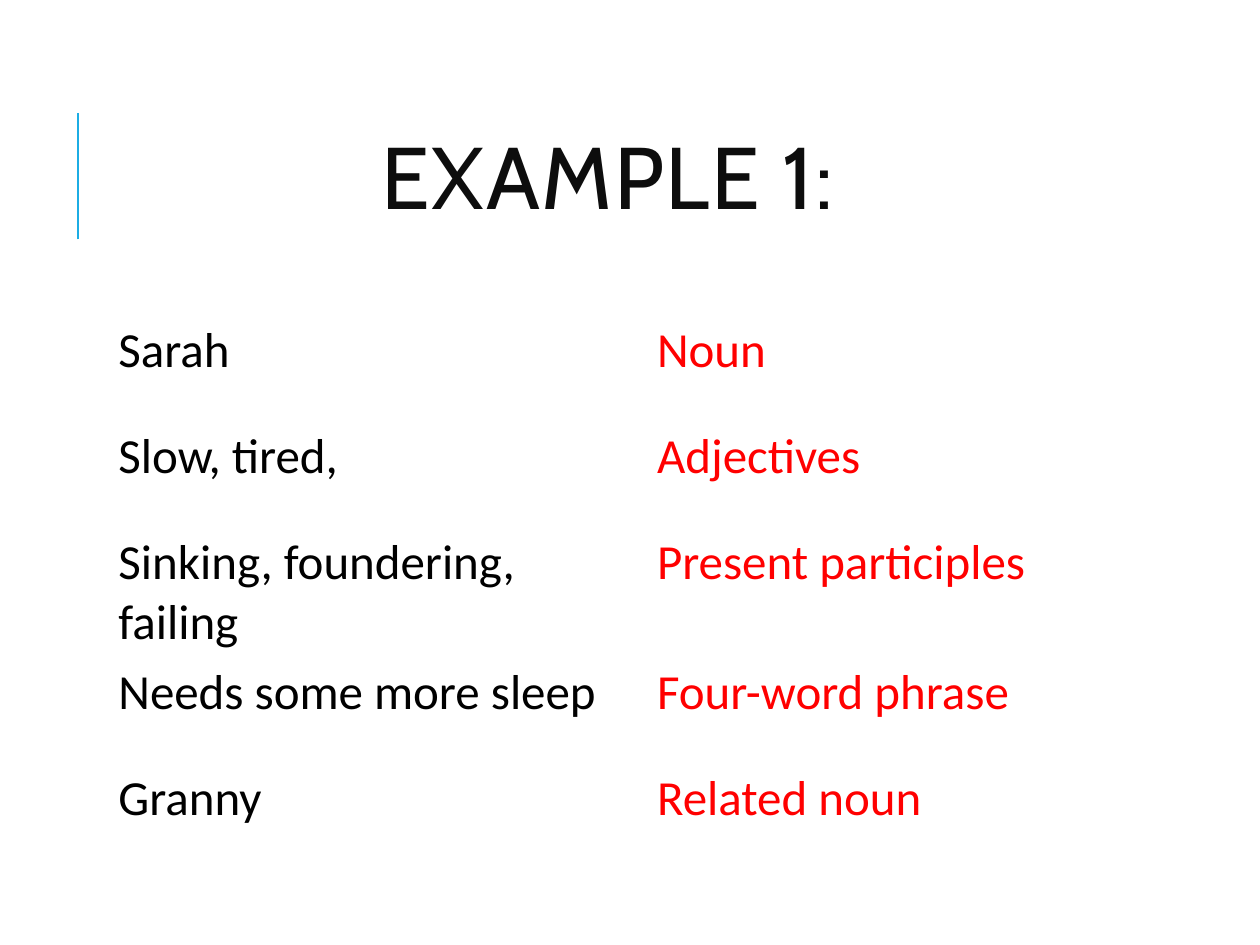
from lxml.etree import SubElement
from pptx import Presentation
from pptx.dml.color import RGBColor
from pptx.enum.shapes import MSO_CONNECTOR as CONN
from pptx.enum.text import MSO_ANCHOR as ANCHOR, PP_ALIGN as ALIGN
from pptx.oxml.ns import qn
from pptx.util import Inches, Pt

ROWS = [
    ("Sarah", "Noun"),
    ("Slow, tired,", "Adjectives"),
    ("Sinking, foundering, failing", "Present participles"),
    ("Needs some more sleep", "Four-word phrase"),
    ("Granny", "Related noun"),
]


def rgb(value):
    return RGBColor.from_string(value)


class SlideBuilder:
    """Holds the style and the current slide, and adds each kind of element."""

    accent = "1CADE4"
    title_font = {"name": "Cabin", "size": Pt(50)}
    body_font = {"name": "Calibri", "size": Pt(28)}
    title_color = "0D0D0D"
    column_colors = ("000000", "FF0000")

    def __init__(self, prs):
        self.s = prs.slides.add_slide(prs.slide_layouts[6])

    def run(self, p, text, font, color):
        r = p.add_run()
        r.text = text
        for name, value in font.items():
            setattr(r.font, name, value)
        r.font.color.rgb = rgb(color)
        return r

    def line(self, x1, y1, x2, y2):
        ln = self.s.shapes.add_connector(
            CONN.STRAIGHT, Inches(x1), Inches(y1), Inches(x2), Inches(y2))
        ln.line.color.rgb = rgb(self.accent)
        ln.line.width = Pt(1.5)
        SubElement(ln._element.spPr, qn("a:effectLst"))

    def title(self, text, x, y, w, h):
        sp = self.s.shapes.add_textbox(Inches(x), Inches(y), Inches(w), Inches(h))
        tf = sp.text_frame
        tf.word_wrap = True
        tf.vertical_anchor = ANCHOR.MIDDLE
        p = tf.paragraphs[0]
        p.alignment = ALIGN.CENTER
        p.line_spacing = 0.8
        r = self.run(p, text, self.title_font, self.title_color)
        r._r.get_or_add_rPr().set("spc", "100")

    def table(self, rows, x, y, w, row_h):
        frame = self.s.shapes.add_table(
            len(rows), len(rows[0]), Inches(x), Inches(y),
            Inches(w), Inches(row_h * len(rows)))
        tbl = frame.table
        tbl.first_row = tbl.horz_banding = False
        for i, row in enumerate(rows):
            for j, (text, color) in enumerate(zip(row, self.column_colors)):
                cell = tbl.cell(i, j)
                cell.fill.background()
                self.run(cell.text_frame.paragraphs[0], text, self.body_font, color)


def main():
    prs = Presentation()
    prs.slide_width, prs.slide_height = Inches(10), Inches(7.5)
    slide = SlideBuilder(prs)
    slide.line(0.62, 1.9, 0.62, 0.9)
    slide.title("EXAMPLE 1:", 0.84, 0.64, 7.97, 1.64)
    slide.table(ROWS, 0.84, 2.5, 8.55, 0.84)
    prs.save("out.pptx")


if __name__ == "__main__":
    main()
